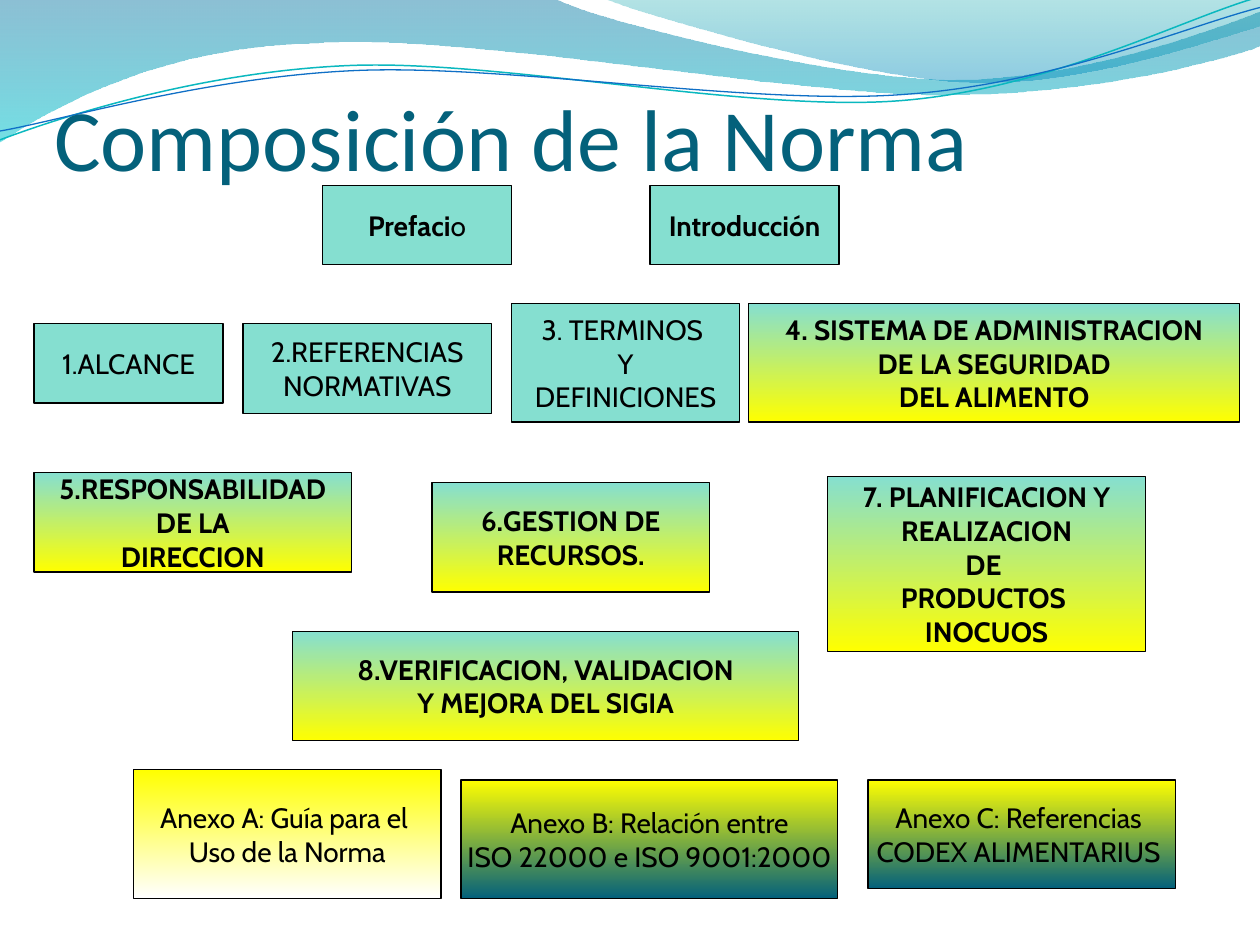
import math

from lxml import etree
from pptx import Presentation
from pptx import util as u
from pptx.dml.color import RGBColor
from pptx.enum import shapes, text
from pptx.oxml.ns import qn

COLORS = {
    "title": "04617B", "black": "000000", "aqua": "85DFD0",
    "yellow": "FFFF00", "white": "FFFFFF", "navy": "04617B",
    "wave_blue": "0074A1", "wave_cyan": "00C6CF",
    "wave_teal": "00A1A9", "wave_sky": "008BBF",
    "line_teal": "0AB8BF", "line_blue": "0F6FC6",
}
TILT = 2.7

AQUA = ("aqua",)
AQUA_YELLOW = ("aqua", "yellow")
YELLOW_WHITE = ("yellow", "white")
YELLOW_NAVY = ("yellow", "navy")

WAVES = [
    ((0, 0), [
        (4.4, -0.01), (4.76, 0.17, 6.64, 0.63, 7.58, 0.63),
        (8.53, 0.63, 9.58, 0.26, 10, 0.09), (10.01, 0.36),
        (9.83, 0.44, 8.7, 0.76, 7.46, 0.75),
        (6.22, 0.75, 3.82, 0.28, 2.57, 0.34),
        (1.29, 0.36, 0.46, 0.83, -0.01, 1.13),
    ], ("wave_blue", "wave_cyan"), (45, 55)),
    ((4.79, -0.01), [
        (5.09, 0.11, 6.82, 0.62, 7.69, 0.65),
        (8.56, 0.69, 9.61, 0.32, 10, 0.21), (10, 0),
    ], ("wave_teal", "wave_sky"), (30, 45)),
]
WAVE_LINES = [
    ((0, 1.11), [
        (0.48, 0.93, 1.58, 0.57, 2.77, 0.52),
        (3.95, 0.47, 5.93, 0.89, 7.13, 0.8),
        (8.33, 0.71, 9.38, 0.15, 9.98, -0.02),
    ], "line_teal", 0.85, (4.99, 0.58)),
    ((0, 1.04), [
        (0.47, 0.96, 1.64, 0.61, 2.83, 0.56),
        (4.03, 0.51, 5.97, 0.84, 7.17, 0.75),
        (8.36, 0.67, 9.41, 0.21, 10, 0.06),
    ], "line_blue", 0.75, (5, 0.59)),
]

SECTIONS = [
    ((2.56, 1.47, 1.5, 0.63), AQUA, [[("Prefaci", True), ("o", False)]]),
    ((5.16, 1.47, 1.5, 0.63), AQUA, [[("Introducción", True)]]),
    ((0.27, 2.57, 1.5, 0.63), AQUA, ["1.ALCANCE"]),
    ((1.93, 2.57, 1.97, 0.71), AQUA, ["2.REFERENCIAS", "NORMATIVAS"]),
    ((4.06, 2.41, 1.81, 0.94), AQUA, ["3. TERMINOS ", "Y", "DEFINICIONES"]),
    ((5.94, 2.41, 3.9, 0.94), AQUA_YELLOW,
     ["4. SISTEMA DE ADMINISTRACION", "DE LA SEGURIDAD", "DEL ALIMENTO"]),
    ((0.27, 3.75, 2.52, 0.79), AQUA_YELLOW,
     ["5.RESPONSABILIDAD", "DE LA", "DIRECCION"]),
    ((3.43, 3.83, 2.2, 0.87), AQUA_YELLOW, ["6.GESTION DE", "RECURSOS."]),
    ((6.57, 3.78, 2.52, 1.39), AQUA_YELLOW,
     ["7. PLANIFICACION Y", "REALIZACION", "DE ", "PRODUCTOS ", "INOCUOS"]),
    ((2.32, 5.01, 4.02, 0.87), AQUA_YELLOW,
     ["8.VERIFICACION, VALIDACION", "Y MEJORA DEL SIGIA"]),
    ((1.06, 6.11, 2.44, 1.02), YELLOW_WHITE,
     ["Anexo A: Guía para el ", "Uso de la Norma"]),
    ((3.66, 6.19, 2.99, 0.94), YELLOW_NAVY,
     ["Anexo B: Relación entre", "ISO 22000 e ISO 9001:2000"]),
    ((6.89, 6.19, 2.44, 0.86), YELLOW_NAVY,
     ["Anexo C: Referencias ", "CODEX ALIMENTARIUS "]),
]


def color(name):
    return RGBColor.from_string(COLORS[name])


def fill_shape(shape, names, opacities=()):
    if len(names) == 1:
        shape.fill.solid()
        shape.fill.fore_color.rgb = color(names[0])
        return
    shape.fill.gradient()
    shape.fill.gradient_angle = 270
    for stop, name in zip(shape.fill.gradient_stops, names):
        stop.color.rgb = color(name)
    stop_colors = shape._element.xpath(".//a:gs/a:srgbClr")
    for stop_color, opacity in zip(stop_colors, opacities):
        etree.SubElement(stop_color, qn("a:alpha"), val=str(opacity * 1000))


def level(point, center):
    angle = math.radians(TILT)
    dx, dy = point[0] - center[0], point[1] - center[1]
    return (center[0] + dx * math.cos(angle) - dy * math.sin(angle),
            center[1] + dx * math.sin(angle) + dy * math.cos(angle))


def add_outline(slide, start, segments, center=None):
    points = [start]
    for segment in segments:
        points += zip(segment[::2], segment[1::2])
    if center:
        points = [level(point, center) for point in points]
    points = [(u.Inches(x), u.Inches(y)) for x, y in points]
    builder = slide.shapes.build_freeform(*points[0], scale=1.0)
    builder.add_line_segments(points[1:], close=center is None)
    shape = builder.convert_to_shape()
    shape.shadow.inherit = False
    steps = iter(shape._element.xpath(".//a:lnTo"))
    for segment in segments:
        step = next(steps)
        if len(segment) == 6:
            step.addprevious(curve := etree.Element(qn("a:cubicBezTo")))
            for part in (step, next(steps), next(steps)):
                curve.append(part[0])
                part.getparent().remove(part)
    return shape


def add_waves(slide):
    for start, segments, names, opacities in WAVES:
        wave = add_outline(slide, start, segments)
        fill_shape(wave, names, opacities)
        wave.line.fill.background()
    for start, segments, name, width, center in WAVE_LINES:
        curve = add_outline(slide, start, segments, center)
        curve.rotation = 360 - TILT
        curve.fill.background()
        curve.line.color.rgb = color(name)
        curve.line.width = u.Pt(width)


def add_run(paragraph, content, font_name, size, name, bold=False):
    run = paragraph.add_run()
    run.text = content
    run.font.name = font_name
    run.font.size = u.Pt(size)
    run.font.bold = bold
    run.font.color.rgb = color(name)


def place_title(slide, box, content):
    title = slide.shapes.title
    title.left, title.top, title.width, title.height = map(u.Inches, box)
    frame = title.text_frame
    frame.margin_left = frame.margin_right = frame.margin_bottom = 0
    frame.margin_top = u.Inches(0.05)
    frame.vertical_anchor = text.MSO_ANCHOR.BOTTOM
    frame.auto_size = text.MSO_AUTO_SIZE.NONE
    paragraph = frame.paragraphs[0]
    paragraph.alignment = text.PP_ALIGN.LEFT
    add_run(paragraph, content, "Calibri", 50, "title")
    slide.shapes._spTree.append(title._element)


def add_section(slide, box, names, lines):
    shape = slide.shapes.add_shape(shapes.MSO_SHAPE.RECTANGLE, *map(u.Inches, box))
    shape.shadow.inherit = False
    fill_shape(shape, names)
    shape.line.color.rgb = color("black")
    shape.line.width = u.Pt(0.75)
    frame = shape.text_frame
    frame.word_wrap = False
    frame.vertical_anchor = text.MSO_ANCHOR.MIDDLE
    for index, line in enumerate(lines):
        paragraph = frame.add_paragraph() if index else frame.paragraphs[0]
        paragraph.alignment = text.PP_ALIGN.CENTER
        runs = [(line, names == AQUA_YELLOW)] if isinstance(line, str) else line
        for content, bold in runs:
            add_run(paragraph, content, "Cabin", 16, "black", bold)


def main():
    presentation = Presentation()
    presentation.slide_width = u.Inches(10)
    presentation.slide_height = u.Inches(7.5)
    slide = presentation.slides.add_slide(presentation.slide_layouts[5])
    add_waves(slide)
    place_title(slide, (0.43, 0, 9, 1.5), "Composición de la Norma")
    for box, names, lines in SECTIONS:
        add_section(slide, box, names, lines)
    presentation.save("out.pptx")


if __name__ == "__main__":
    main()
